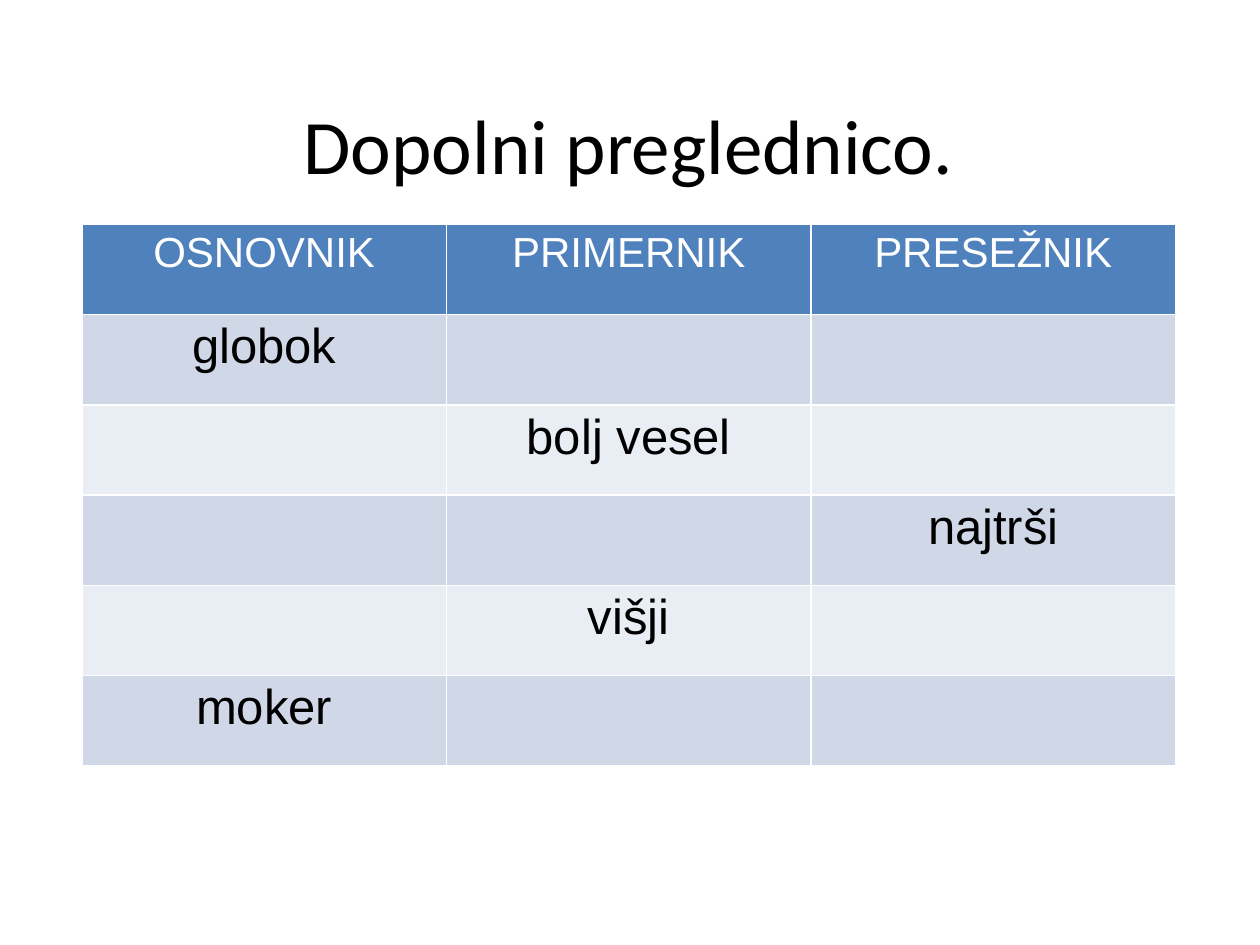
from pptx import Presentation
from pptx.dml.color import RGBColor
from pptx.enum import text
from pptx.util import Inches, Pt

HEADINGS = ["OSNOVNIK", "PRIMERNIK", "PRESEŽNIK"]
ADJECTIVES = [
    ["globok", "", ""],
    ["", "bolj vesel", ""],
    ["", "", "najtrši"],
    ["", "višji", ""],
    ["moker", "", ""],
]
HEADING_FILL = "4F81BD"
BAND_FILLS = ["D0D8E8", "E9EDF4"]


def color(value):
    return RGBColor.from_string(value)


def write(frame, words, size=28, font="Arial", ink="000000"):
    paragraph = frame.paragraphs[0]
    paragraph.alignment = text.PP_ALIGN.CENTER
    run = paragraph.add_run()
    run.text = words
    run.font.size = Pt(size)
    run.font.name = font
    run.font.bold = False
    run.font.color.rgb = color(ink)


def add_title(slide, words):
    title = slide.shapes.title
    title.left, title.top = Inches(0.94), Inches(0.74)
    title.width, title.height = Inches(8.1), Inches(0.8)
    frame = title.text_frame
    frame.margin_top = frame.margin_bottom = 0
    frame.vertical_anchor = text.MSO_ANCHOR.MIDDLE
    write(frame, words, size=44, font="Calibri")


def fill_cell(cell, words, fill, **style):
    cell.fill.solid()
    cell.fill.fore_color.rgb = color(fill)
    cell.margin_left = cell.margin_right = Inches(0.07)
    cell.margin_top = cell.margin_bottom = Inches(0.04)
    if words:
        write(cell.text_frame, words, **style)


def add_comparison(slide):
    rows, columns = len(ADJECTIVES) + 1, len(HEADINGS)
    comparison = slide.shapes.add_table(
        rows, columns, Inches(0.65), Inches(1.78), Inches(8.68), Inches(4.3)
    ).table
    for column, heading in enumerate(HEADINGS):
        fill_cell(comparison.cell(0, column), heading, HEADING_FILL,
                  size=24, ink="FFFFFF")
    for row, forms in enumerate(ADJECTIVES):
        for column, form in enumerate(forms):
            fill_cell(comparison.cell(row + 1, column), form, BAND_FILLS[row % 2])


def main():
    deck = Presentation()
    deck.slide_width, deck.slide_height = Inches(10), Inches(7.5)
    slide = deck.slides.add_slide(deck.slide_layouts[5])
    add_title(slide, "Dopolni preglednico.")
    add_comparison(slide)
    deck.save("out.pptx")


if __name__ == "__main__":
    main()
